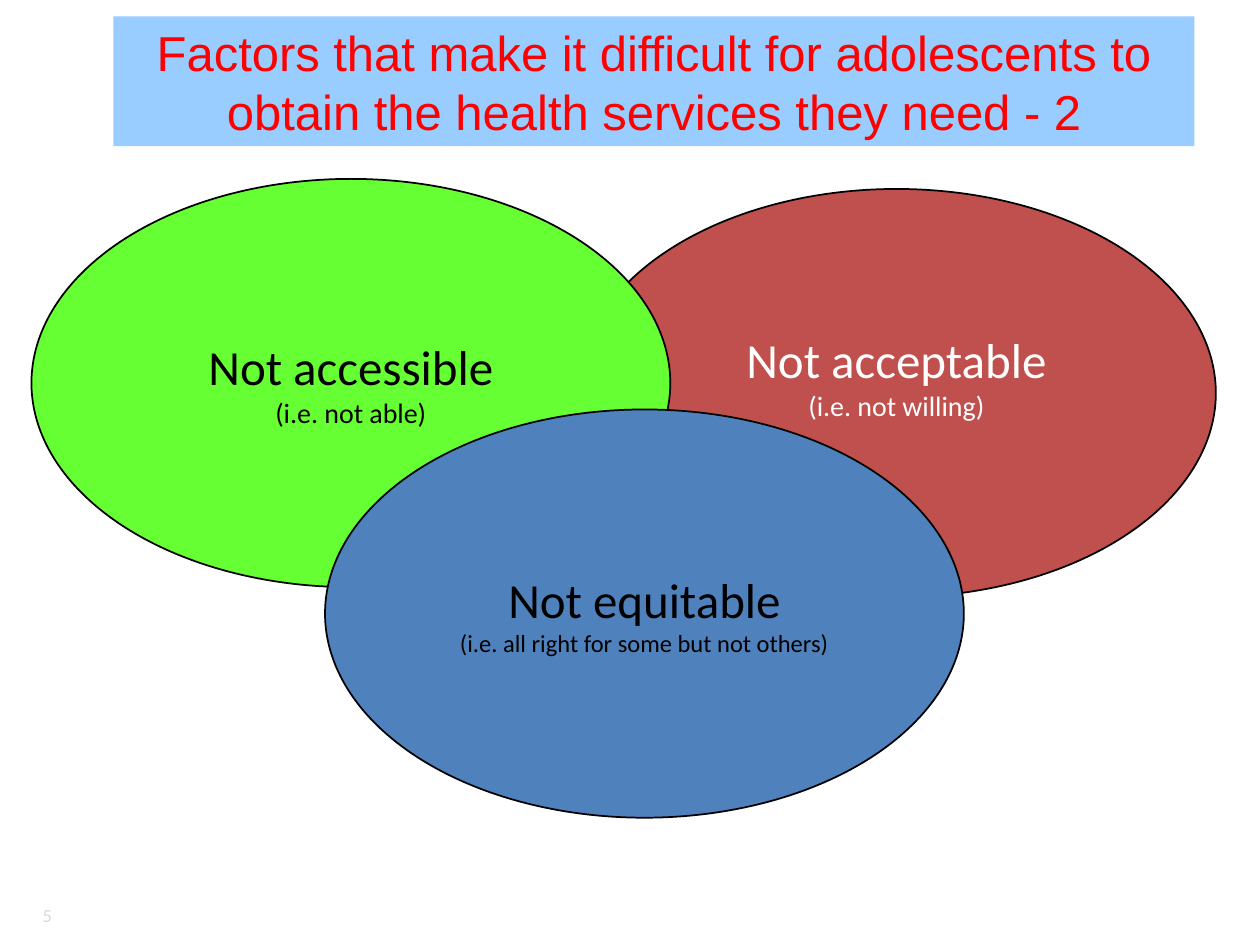
import pptx
import pptx.util
import pptx.dml.color
import pptx.enum.shapes
import pptx.enum.text

Inches, Pt = pptx.util.Inches, pptx.util.Pt
RGBColor = pptx.dml.color.RGBColor
MSO_SHAPE = pptx.enum.shapes.MSO_SHAPE
PP_ALIGN = pptx.enum.text.PP_ALIGN
MSO_ANCHOR = pptx.enum.text.MSO_ANCHOR

BLACK = RGBColor(0x00, 0x00, 0x00)
WHITE = RGBColor(0xFF, 0xFF, 0xFF)
RED = RGBColor(0xFF, 0x00, 0x00)
SKY = RGBColor(0x99, 0xCC, 0xFF)
BRICK = RGBColor(0xC0, 0x50, 0x4D)
GREEN = RGBColor(0x66, 0xFF, 0x33)
BLUE = RGBColor(0x4F, 0x81, 0xBD)
GREY = RGBColor(0xD9, 0xD9, 0xD9)

TITLE = ("Factors that make it difficult for adolescents to "
         "obtain the health services they need - 2")
PAGE_NUMBER = "5"
OVAL_SIZE = (5.07, 3.24)
# left, top, fill, text colour, heading, explanation, its size, bottom inset
FACTORS = [
    (4.58, 1.50, BRICK, WHITE, "Not acceptable", "(i.e. not willing)", 16, 0.32),
    (0.25, 1.42, GREEN, BLACK, "Not accessible", "(i.e. not able)", 16, 0.05),
    (2.58, 3.25, BLUE, BLACK, "Not equitable",
     "(i.e. all right for some but not others)", 14, 0.05),
]


def write(tf, lines, font, color, align=PP_ALIGN.CENTER):
    """Put (text, size) lines into a text frame, one paragraph each."""
    tf.vertical_anchor = MSO_ANCHOR.MIDDLE
    for i, (text, size) in enumerate(lines):
        p = tf.paragraphs[0] if i == 0 else tf.add_paragraph()
        p.alignment = align
        r = p.add_run()
        r.text = text
        r.font.name = font
        r.font.size = Pt(size)
        r.font.color.rgb = color


def add_filled(s, kind, box, fill):
    sp = s.shapes.add_shape(kind, *map(Inches, box))
    sp.shadow.inherit = False
    sp.fill.solid()
    sp.fill.fore_color.rgb = fill
    return sp


prs = pptx.Presentation()
prs.slide_width, prs.slide_height = Inches(10), Inches(7.5)
s = prs.slides.add_slide(prs.slide_layouts[6])

# Page number
sp = s.shapes.add_textbox(*map(Inches, (0.12, 7.14, 0.39, 0.24)))
sp.text_frame.word_wrap = True
write(sp.text_frame, [(PAGE_NUMBER, 10.5)], "Calibri", GREY, PP_ALIGN.RIGHT)

# Overlapping ovals
for left, top, fill, color, heading, note, note_size, bottom in FACTORS:
    sp = add_filled(s, MSO_SHAPE.OVAL, (left, top, *OVAL_SIZE), fill)
    sp.line.color.rgb = BLACK
    sp.line.width = Pt(1)
    tf = sp.text_frame
    tf.word_wrap = False
    tf.margin_bottom = Inches(bottom)
    write(tf, [(heading, 28), (note, note_size)], "Calibri", color)

# Title banner
sp = add_filled(s, MSO_SHAPE.RECTANGLE, (0.9, 0.13, 8.58, 1.03), SKY)
sp.line.fill.background()
sp.text_frame.word_wrap = True
write(sp.text_frame, [(TITLE, 28)], "Arial", RED)

prs.save("out.pptx")
